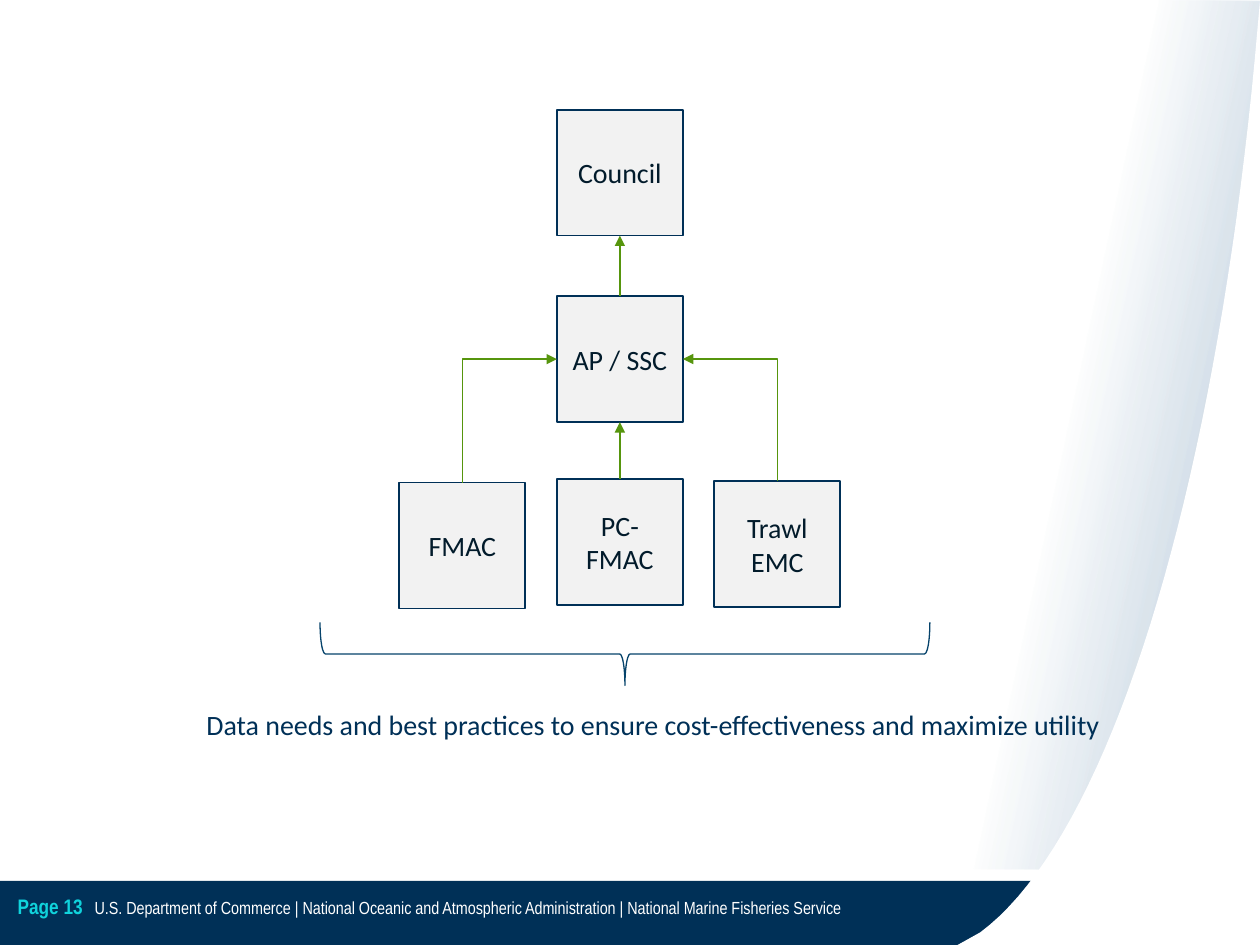
import pptx
import pptx.util
import pptx.dml.color
import pptx.enum.shapes
import pptx.enum.text
import pptx.oxml
import pptx.oxml.ns
from lxml import etree

Inches = pptx.util.Inches
Pt = pptx.util.Pt
SHAPE = pptx.enum.shapes.MSO_SHAPE
CONNECTOR = pptx.enum.shapes.MSO_CONNECTOR
ALIGN = pptx.enum.text.PP_ALIGN
ANCHOR = pptx.enum.text.MSO_ANCHOR
qn = pptx.oxml.ns.qn

COLORS = {
    "navy": "003057", "white": "FFFFFF", "box": "F2F2F2", "ink": "021B2B",
    "arrow": "56950D", "brace": "06436B", "sweep": "07477D", "page": "10D3DC",
}
TOP, LEFT, BOTTOM, RIGHT = range(4)


def rgb(name):
    return pptx.dml.color.RGBColor.from_string(COLORS[name])


def bezier(start, control_1, control_2, end, steps=40):
    """Points along a cubic curve, without its start."""
    points = []
    for step in range(1, steps + 1):
        t = step / steps
        weights = ((1 - t) ** 3, 3 * t * (1 - t) ** 2, 3 * t * t * (1 - t), t ** 3)
        corners = (start, control_1, control_2, end)
        points.append(tuple(sum(w * c[axis] for w, c in zip(weights, corners))
                            for axis in (0, 1)))
    return points


class SlideBuilder:
    body_font = "Calibri"
    footer_font = "Arial Narrow"
    body_size = 16
    box_side = 1

    def __init__(self, slide):
        self.slide = slide
        self.shapes = slide.shapes

    def style_text(self, frame, text, size, font, color, bold=None, align=None):
        paragraph = frame.paragraphs[0]
        paragraph.text = text
        paragraph.alignment = align
        paragraph.font.size = Pt(size)
        paragraph.font.name = font
        paragraph.font.bold = bold
        paragraph.font.color.rgb = rgb(color)

    def preset(self, kind, left, top, width, height, fill=None, line=None, weight=1):
        shape = self.shapes.add_shape(
            kind, Inches(left), Inches(top), Inches(width), Inches(height))
        shape.shadow.inherit = False
        if fill:
            shape.fill.solid()
            shape.fill.fore_color.rgb = rgb(fill)
        else:
            shape.fill.background()
        if line:
            shape.line.color.rgb = rgb(line)
            shape.line.width = Pt(weight)
        else:
            shape.line.fill.background()
        return shape

    def outline(self, points):
        corners = [(Inches(x), Inches(y)) for x, y in points]
        builder = self.shapes.build_freeform(*corners[0])
        builder.add_line_segments(corners[1:], close=True)
        shape = builder.convert_to_shape()
        shape.shadow.inherit = False
        shape.line.fill.background()
        return shape

    def box(self, text, left, top):
        shape = self.preset(SHAPE.RECTANGLE, left, top, self.box_side, self.box_side,
                            "box", "navy", 1.1)
        shape.text_frame.vertical_anchor = ANCHOR.MIDDLE
        self.style_text(shape.text_frame, text, self.body_size, self.body_font, "ink",
                        align=ALIGN.CENTER)
        return shape

    def text(self, text, left, top, width, height, size, font, color,
             bold=None, footer=False):
        frame = self.shapes.add_textbox(
            Inches(left), Inches(top), Inches(width), Inches(height)).text_frame
        frame.word_wrap = footer
        if footer:
            frame.margin_left = frame.margin_right = 0
            frame.vertical_anchor = ANCHOR.MIDDLE
        self.style_text(frame, text, size, font, color, bold)

    def arrow(self, source, target, side=BOTTOM):
        """Arrow from the top of source to one side of target."""
        straight = side == BOTTOM
        kind = CONNECTOR.STRAIGHT if straight else CONNECTOR.ELBOW
        connector = self.shapes.add_connector(kind, 0, 0, 0, 0)
        connector.begin_connect(source, TOP)
        connector.end_connect(target, side)
        connector.line.color.rgb = rgb("arrow")
        connector.line.width = Pt(0.75)
        properties = connector._element.spPr
        etree.SubElement(properties, qn("a:effectLst"))
        etree.SubElement(connector.line._get_or_add_ln(), qn("a:tailEnd"), type="triangle")
        if not straight:
            self.bend_once(connector, properties, mirrored=side == RIGHT)

    def bend_once(self, connector, properties, mirrored):
        """One corner: up from the start, then sideways (a quarter-turned elbow)."""
        run, rise = connector.width, connector.height
        center_x = connector.left + run // 2
        center_y = connector.top + rise // 2
        connector.left, connector.top = center_x - rise // 2, center_y - run // 2
        connector.width, connector.height = rise, run
        transform = properties.find(qn("a:xfrm"))
        for flip in ("flipH", "flipV"):
            transform.attrib.pop(flip, None)
        transform.set("rot", str(270 * 60000))
        if mirrored:
            transform.set("flipV", "1")
        properties.find(qn("a:prstGeom")).set("prst", "bentConnector2")

    def sweep(self, points):
        """Outline that fades in from clear."""
        shape = self.outline(points)
        shape.fill.gradient()
        shape.fill.gradient_angle = 348
        for stop, position, opacity in zip(shape.fill.gradient_stops, (0.42, 1), (0, 34)):
            stop.color.rgb = rgb("sweep")
            stop.position = position
            color = stop._gs.find(qn("a:srgbClr"))
            etree.SubElement(color, qn("a:alpha"), val=str(opacity * 1000))


def main():
    deck = pptx.Presentation()
    deck.slide_width, deck.slide_height = Inches(10), Inches(7.5)
    page = SlideBuilder(deck.slides.add_slide(deck.slide_layouts[6]))

    # Footer band and curved right edge
    page.preset(SHAPE.RECTANGLE, 0, 6.99, 10, 0.51, "navy")
    page.sweep([(9.94, 6.9), (7.52, 6.89), (8.96, 0), (10, 0.01)])
    edge = bezier((7.78, 7.4), (8.8, 6.64), (9.63, 3.96), (9.96, 0.46))
    corner = page.outline([(10, 0.01), (10, 7.5), (7.6, 7.5), (7.78, 7.4), *edge])
    corner.fill.solid()
    corner.fill.fore_color.rgb = rgb("white")

    # Footer text
    page.text("U.S. Department of Commerce | National Oceanic and Atmospheric "
              "Administration | National Marine Fisheries Service",
              0.75, 6.91, 7.32, 0.59, 10, page.footer_font, "white", footer=True)
    page.text("Page 13", 0.14, 6.89, 0.61, 0.61, 12, page.footer_font, "page",
              bold=True, footer=True)

    # Committees, advisory bodies and council
    committees = [page.box(name, 3.17 + 1.25 * column, top) for column, (name, top)
                  in enumerate([("FMAC", 3.83), ("PC-FMAC", 3.8), ("Trawl EMC", 3.82)])]
    advisers = page.box("AP / SSC", 4.42, 2.35)
    council = page.box("Council", 4.42, 0.87)

    # Reporting lines
    for committee, side in zip(committees, (LEFT, BOTTOM, RIGHT)):
        page.arrow(committee, advisers, side)
    page.arrow(advisers, council)

    # Shared purpose
    brace = page.preset(SHAPE.RIGHT_BRACE, 4.71, 2.77, 0.5, 4.84, line="brace", weight=0.75)
    brace.rotation = 90
    page.text("Data needs and best practices to ensure cost-effectiveness and maximize utility",
              1.54, 5.57, 7.39, 0.37, page.body_size, page.body_font, "navy")

    deck.save("out.pptx")


if __name__ == "__main__":
    main()
